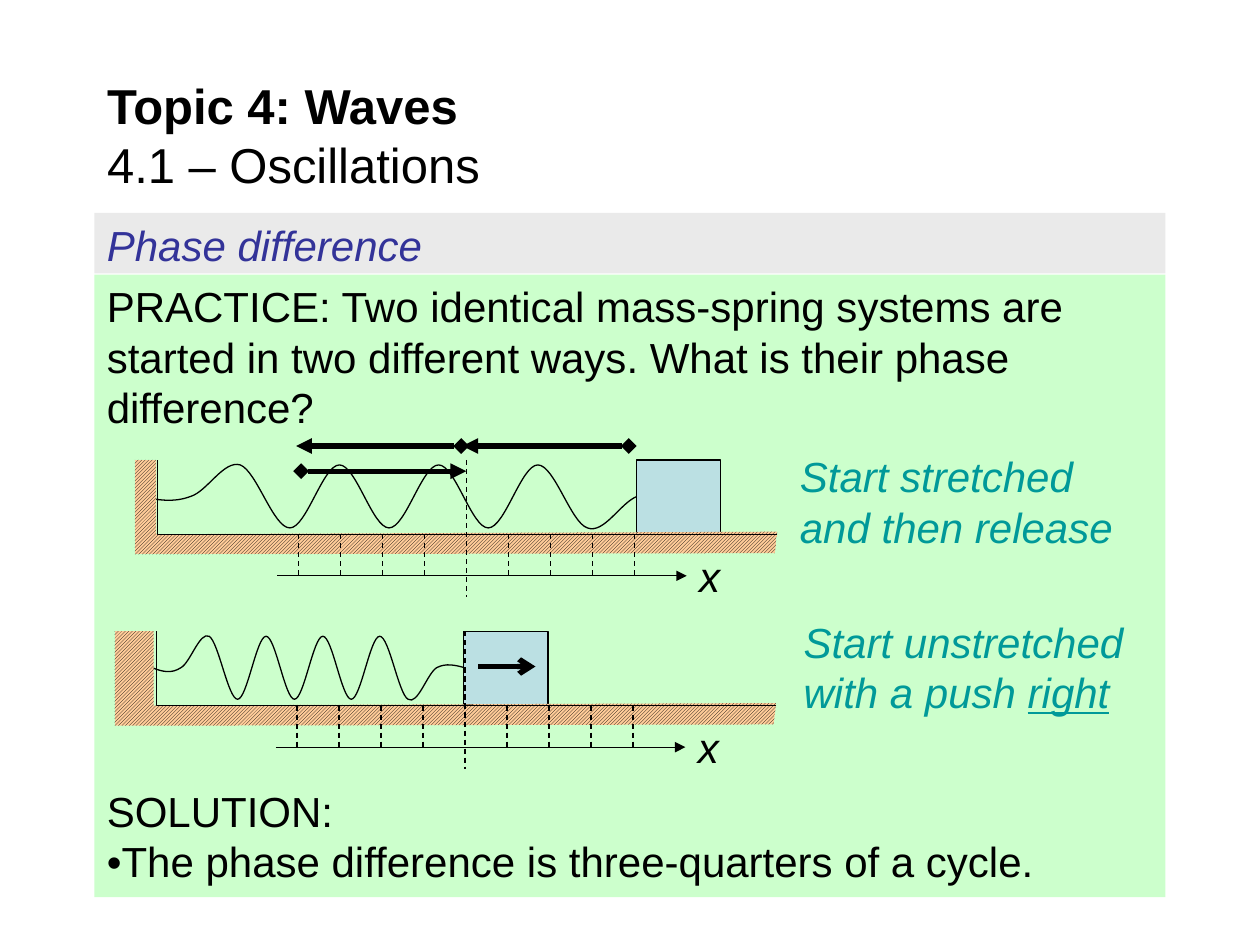
from lxml import etree
from pptx import Presentation
from pptx.dml.color import RGBColor
from pptx.enum.dml import MSO_LINE, MSO_PATTERN
from pptx.enum.shapes import MSO_CONNECTOR, MSO_SHAPE
from pptx.enum.text import MSO_ANCHOR, MSO_AUTO_SIZE, PP_ALIGN
from pptx.oxml.ns import qn
from pptx.util import Inches, Pt

STRAIGHT = MSO_CONNECTOR.STRAIGHT
RECTANGLE = MSO_SHAPE.RECTANGLE
DASH = MSO_LINE.DASH
HATCH = MSO_PATTERN.LIGHT_UPWARD_DIAGONAL
LEFT, TOP, MIDDLE = PP_ALIGN.LEFT, MSO_ANCHOR.TOP, MSO_ANCHOR.MIDDLE

COLORS = {"black": "000000", "panel": "CCFFCC", "header": "EAEAEA", "heading": "333399",
          "caption": "009999", "block": "BBE0E3", "wall": "FFCC99"}
FONT = "Arial"
BODY_SIZE = 24

TITLE = ("Topic 4: Waves", "4.1 – Oscillations")
HEADING = "Phase difference"
BODY = [
    ("PRACTICE: Two identical mass-spring systems are started in two different ways. "
     "What is their phase difference?", 0),
    ("SOLUTION:", 202),
    ("•The phase difference is three-quarters of a cycle.", 0),
]
CAPTIONS = [
    ((6.25, 3.53, 2.91, 0.91), "Start stretched and then release", ""),
    ((6.28, 4.84, 3.34, 0.91), "Start unstretched with a push ", "right"),
]
SYSTEMS = [
    {"center": 3.7, "top": 3.65, "wall": 1.07, "wall_width": 0.17, "spring": (1.12, 5.45), "block": 5.05},
    {"center": 3.69, "top": 5.01, "wall": 0.91, "wall_width": 0.31, "spring": (1.21, 3.69), "block": 3.68},
]
MOTION_ARROWS = [
    (4.99, 3.67, 3.54, "diamond", "triangle"),
    (3.66, 2.35, 3.54, "diamond", "triangle"),
    (2.39, 3.7, 3.74, "diamond", "triangle"),
    (4.25, 3.79, 5.29, "arrow", None),
]
SPRING_CONTROLS = [0.29, 0.32, 0.34, 0.29, 0.25, 0, 0.04, 0.09, 0.54, 0.54,
                   *[0.54, 0.04, 0.04, 0.04, 0.54, 0.54] * 3,
                   0.04 + 0.5, 0.04, 0.04, 0.04, 0.5, 0.54, 0.59, 0.34, 0.29, 0.25, 0.27, 0.29]
SPRING_CONTROLS = SPRING_CONTROLS[:22] + SPRING_CONTROLS[28:]
TICK_GAP = 1 / 3
TICKS_PER_SIDE = 4
FLOOR, AXIS, GUIDE_END = 0.59, 0.92, 1.09

presentation = Presentation()
presentation.slide_width, presentation.slide_height = Inches(10), Inches(7.5)
slide = presentation.slides.add_slide(presentation.slide_layouts[5])
shapes = slide.shapes


def color(name):
    return RGBColor.from_string(COLORS[name])


def style_font(font, size=BODY_SIZE, name="black", italic=False):
    font.name, font.size, font.italic = FONT, Pt(size), italic
    font.color.rgb = color(name)


def style_line(shape, width=0.75):
    shape.line.color.rgb = color("black")
    shape.line.width = Pt(width)


def add_rectangle(box, fill):
    shape = shapes.add_shape(RECTANGLE, *map(Inches, box))
    shape.shadow.inherit = False
    shape.fill.solid()
    shape.fill.fore_color.rgb = color(fill)
    shape.line.fill.background()
    shape.text_frame.vertical_anchor = TOP
    return shape


def add_text(box, text, name="black", wrap=True):
    frame = shapes.add_textbox(*map(Inches, box)).text_frame
    frame.word_wrap = wrap
    paragraph = frame.paragraphs[0]
    paragraph.add_run().text = text
    style_font(paragraph.font, name=name, italic=True)
    return paragraph


def add_line(start, end, width=0.75, dash=None, head=None, tail=None):
    line = shapes.add_connector(STRAIGHT, *map(Inches, (*start, *end)))
    style_line(line, width)
    if dash:
        line.line.dash_style = dash
    outline = line.line._get_or_add_ln()
    for tag, kind in (("a:headEnd", head), ("a:tailEnd", tail)):
        if kind:
            etree.SubElement(outline, qn(tag), type=kind)
    etree.SubElement(line._element.spPr, qn("a:effectLst"))


def add_outline(points, closed=False):
    corners = [(Inches(x), Inches(y)) for x, y in points]
    builder = shapes.build_freeform(*corners[0])
    builder.add_line_segments(corners[1:], close=closed)
    shape = builder.convert_to_shape()
    shape.shadow.inherit = False
    shape.fill.background()
    style_line(shape)
    return shape


def add_spring(left, right, top):
    step = (right - left) / (len(SPRING_CONTROLS) - 1)
    spring = add_outline([(left + index * step, top + y) for index, y in enumerate(SPRING_CONTROLS)])
    segments = spring._element.findall(".//" + qn("a:lnTo"))
    for first in range(0, len(segments), 3):
        curve = etree.Element(qn("a:cubicBezTo"))
        segments[first].addprevious(curve)
        for segment in segments[first:first + 3]:
            curve.append(segment[0])
            segment.getparent().remove(segment)


def add_system(system):
    center, top, wall = system["center"], system["top"], system["wall"]
    inner = wall + system["wall_width"]
    floor, axis, right = top + FLOOR, top + AXIS, center + 2.47

    add_spring(*system["spring"], top)
    style_line(add_rectangle((system["block"], top, 0.67, 0.58), "block"))
    ground = add_outline([(right - 0.02, floor + 0.15), (right, floor - 0.02), (inner, floor), (inner, top),
                          (wall, top), (wall, floor + 0.16)], closed=True)
    ground.fill.patterned()
    ground.fill.pattern = HATCH
    ground.fill.fore_color.rgb = color("black")
    ground.fill.back_color.rgb = color("wall")
    ground.line.fill.background()
    add_outline([(right, floor), (center - 2.45, floor), (center - 2.45, top)])

    add_line((center, top), (center, top + GUIDE_END), dash=DASH)
    add_line((center - 1.5, axis), (center + 1.75, axis), tail="triangle")
    add_text((center + 1.75, axis - 0.25, 0.37, 0.5), "x", wrap=False)
    for tick in range(-TICKS_PER_SIDE, TICKS_PER_SIDE + 1):
        if tick:
            x = center + tick * TICK_GAP
            add_line((x, floor), (x, axis), dash=DASH)


title = shapes.title
title.left, title.top, title.width, title.height = map(Inches, (0.75, 0.58, 8.5, 0.98))
title.text_frame.auto_size = MSO_AUTO_SIZE.NONE
title.text_frame.vertical_anchor = MIDDLE
paragraph = title.text_frame.paragraphs[0]
paragraph.alignment = LEFT
style_font(paragraph.font, 28)
run = paragraph.add_run()
run.text, run.font.bold = TITLE[0], True
paragraph.add_line_break()
paragraph.add_run().text = TITLE[1]

panel = add_rectangle((0.75, 2.18, 8.5, 4.94), "panel")
for index, (text, space) in enumerate(BODY):
    frame = panel.text_frame
    paragraph = frame.add_paragraph() if index else frame.paragraphs[0]
    paragraph.text, paragraph.alignment = text, LEFT
    paragraph.space_before = Pt(space)
    style_font(paragraph.font)

header = add_rectangle((0.75, 1.69, 8.5, 0.48), "header")
paragraph = header.text_frame.paragraphs[0]
paragraph.text, paragraph.alignment = HEADING, LEFT
style_font(paragraph.font, name="heading", italic=True)

for box, text, underlined in CAPTIONS:
    paragraph = add_text(box, text, "caption")
    if underlined:
        run = paragraph.add_run()
        run.text, run.font.underline = underlined, True

for system in SYSTEMS:
    add_system(system)
for start, end, y, head, tail in MOTION_ARROWS:
    add_line((start, y), (end, y), 3, head=head, tail=tail)

presentation.save("out.pptx")
